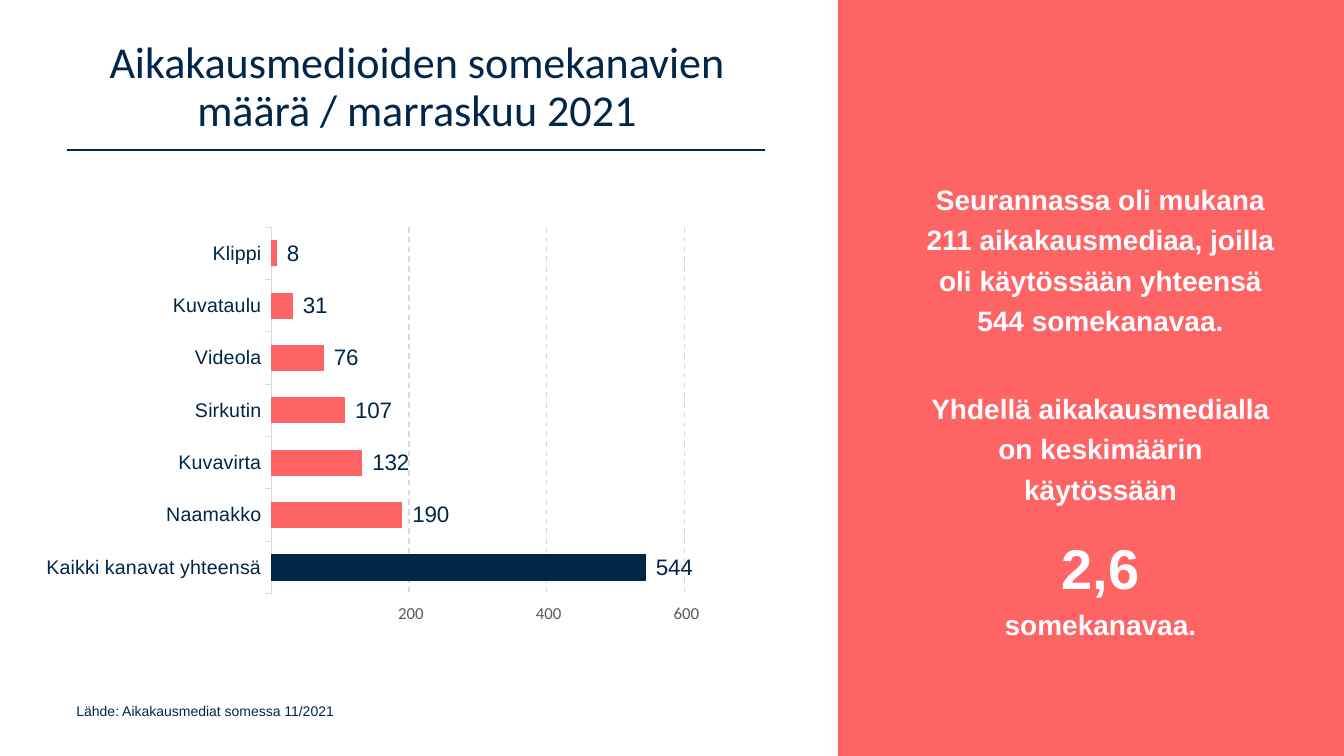
from lxml import etree
from pptx import Presentation
from pptx.chart.data import CategoryChartData
from pptx.dml.color import RGBColor
from pptx.enum import chart as ch, dml, shapes, text
from pptx.oxml import parse_xml
from pptx.oxml.ns import nsdecls, qn
from pptx.util import Inches, Pt

CORAL = RGBColor(0xFF, 0x64, 0x64)
NAVY = RGBColor(0x00, 0x26, 0x49)
WHITE = RGBColor(0xFE, 0xFC, 0xFF)
GRAY = RGBColor(0xD9, 0xD9, 0xD9)
SLATE = RGBColor(0x59, 0x59, 0x59)

FORMAT = r"#\ ##0;\-#\ ##0;;@"
COUNTS = {
    "Kaikki kanavat yhteensä": 544,
    "Naamakko": 190,
    "Kuvavirta": 132,
    "Sirkutin": 107,
    "Videola": 76,
    "Kuvataulu": 31,
    "Klippi": 8,
}
# Text, size, space before
FACTS = [
    ("Seurannassa oli mukana 211 aikakausmediaa, joilla "
     "oli käytössään yhteensä 544 somekanavaa.", 20, 0),
    ("Yhdellä aikakausmedialla on keskimäärin käytössään", 20, 34),
    ("2,6", 40, 10),
    ("somekanavaa.", 20, 0),
]


def place(shape, box):
    shape.left, shape.top, shape.width, shape.height = map(Inches, box)


def style(font, size, color, name="Arial", bold=False):
    font.size, font.name, font.bold = Pt(size), name, bold
    font.color.rgb = color


def add_head(slide, box):
    """Title with a rule along its lower edge."""
    x, y, w, h = box
    title = slide.shapes.title
    place(title, box)
    frame = title.text_frame
    frame.text = "Aikakausmedioiden somekanavien määrä / marraskuu 2021"
    frame.auto_size = text.MSO_AUTO_SIZE.NONE
    frame.vertical_anchor = text.MSO_ANCHOR.MIDDLE
    para = frame.paragraphs[0]
    para.alignment = text.PP_ALIGN.CENTER
    para.line_spacing = 0.9
    style(para.font, 31.5, NAVY, "Calibri")

    low = Inches(y + h - 0.01)
    rule = slide.shapes.add_connector(
        shapes.MSO_CONNECTOR.STRAIGHT, Inches(x), low, Inches(x + w - 0.02), low)
    rule.line.color.rgb = NAVY
    rule.line.width = Pt(1)
    etree.SubElement(rule._element.spPr, qn("a:effectLst"))


def add_panel(slide, box):
    """Coloured side panel with the key facts."""
    x, y, w, h = box
    panel = slide.shapes.add_shape(
        shapes.MSO_SHAPE.RECTANGLE, *map(Inches, box))
    panel.shadow.inherit = False
    panel.fill.solid()
    panel.fill.fore_color.rgb = CORAL
    panel.line.fill.background()
    slide.shapes._spTree.insert(2, panel._element)  # behind the text

    body = slide.placeholders[1]
    place(body, (x + 0.73, y + 1.5, w - 1.27, h - 2.4))
    frame = body.text_frame
    frame.auto_size = text.MSO_AUTO_SIZE.NONE
    frame.vertical_anchor = text.MSO_ANCHOR.MIDDLE
    frame.text = "\n".join(fact[0] for fact in FACTS)
    for para, (_, size, gap) in zip(frame.paragraphs, FACTS):
        para.alignment = text.PP_ALIGN.CENTER
        para.line_spacing = 1.2
        para.space_before = Pt(gap)
        props = para._p.get_or_add_pPr()
        props.set("marL", "0")
        props.set("indent", "0")
        etree.SubElement(props, qn("a:buNone"))
        style(para.font, size, WHITE, bold=True)


def set_plot(chart, x, y, w, h):
    """Fix the inner plot area, in fractions of the chart."""
    area = chart._chartSpace.chart.plotArea
    old = area.find(qn("c:layout"))
    if old is not None:
        area.remove(old)
    area.insert(0, parse_xml(
        f'<c:layout {nsdecls("c")}><c:manualLayout>'
        '<c:layoutTarget val="inner"/>'
        '<c:xMode val="edge"/><c:yMode val="edge"/>'
        f'<c:x val="{x}"/><c:y val="{y}"/><c:w val="{w}"/><c:h val="{h}"/>'
        '</c:manualLayout></c:layout>'))


def add_bars(slide, box):
    data = CategoryChartData()
    data.categories = COUNTS.keys()
    data.add_series("Series 1", COUNTS.values())
    chart = slide.shapes.add_chart(
        ch.XL_CHART_TYPE.BAR_CLUSTERED, *map(Inches, box), data).chart
    chart.has_legend = chart.has_title = False
    chart.font.size, chart.font.name = Pt(10), "Calibri"
    set_plot(chart, 0.324, 0.086, 0.493, 0.838)

    cats = chart.category_axis
    cats.major_tick_mark = ch.XL_TICK_MARK.OUTSIDE
    cats.format.line.color.rgb = GRAY
    cats.format.line.width = Pt(0.75)
    style(cats.tick_labels.font, 14, NAVY)

    axis = chart.value_axis
    axis.minimum_scale, axis.maximum_scale, axis.major_unit = 0, 600, 200
    axis.major_tick_mark = ch.XL_TICK_MARK.OUTSIDE
    axis.format.line.fill.background()
    grid = axis.major_gridlines.format.line
    grid.color.rgb = GRAY
    grid.width = Pt(1)
    grid.dash_style = dml.MSO_LINE.DASH
    style(axis.tick_labels.font, 12, SLATE, "Calibri")

    plot = chart.plots[0]
    plot.gap_width = 100
    plot.vary_by_categories = False
    bars = plot.series[0]
    bars.format.fill.solid()
    bars.format.fill.fore_color.rgb = CORAL
    total = bars.points[0].format.fill
    total.solid()
    total.fore_color.rgb = NAVY

    labels = bars.data_labels
    labels.show_value = True
    labels.position = ch.XL_LABEL_POSITION.OUTSIDE_END
    style(labels.font, 16, NAVY)
    for part in (axis.tick_labels, labels):
        part.number_format = FORMAT
        part.number_format_is_linked = False


def add_source(slide, box):
    frame = slide.shapes.add_textbox(*map(Inches, box)).text_frame
    frame.word_wrap = True
    frame.text = "Lähde: Aikakausmediat somessa 11/2021"
    style(frame.paragraphs[0].font, 10, NAVY)


def main():
    deck = Presentation()
    deck.slide_width, deck.slide_height = Inches(13.33), Inches(7.5)
    slide = deck.slides.add_slide(deck.slide_layouts[1])
    add_panel(slide, (8.31, 0, 5.02, 7.5))
    add_head(slide, (0.66, 0.25, 6.95, 1.25))
    add_bars(slide, (0, 1.88, 8.31, 4.34))
    add_source(slide, (0.66, 6.92, 6.58, 0.44))
    deck.save("out.pptx")


if __name__ == "__main__":
    main()
